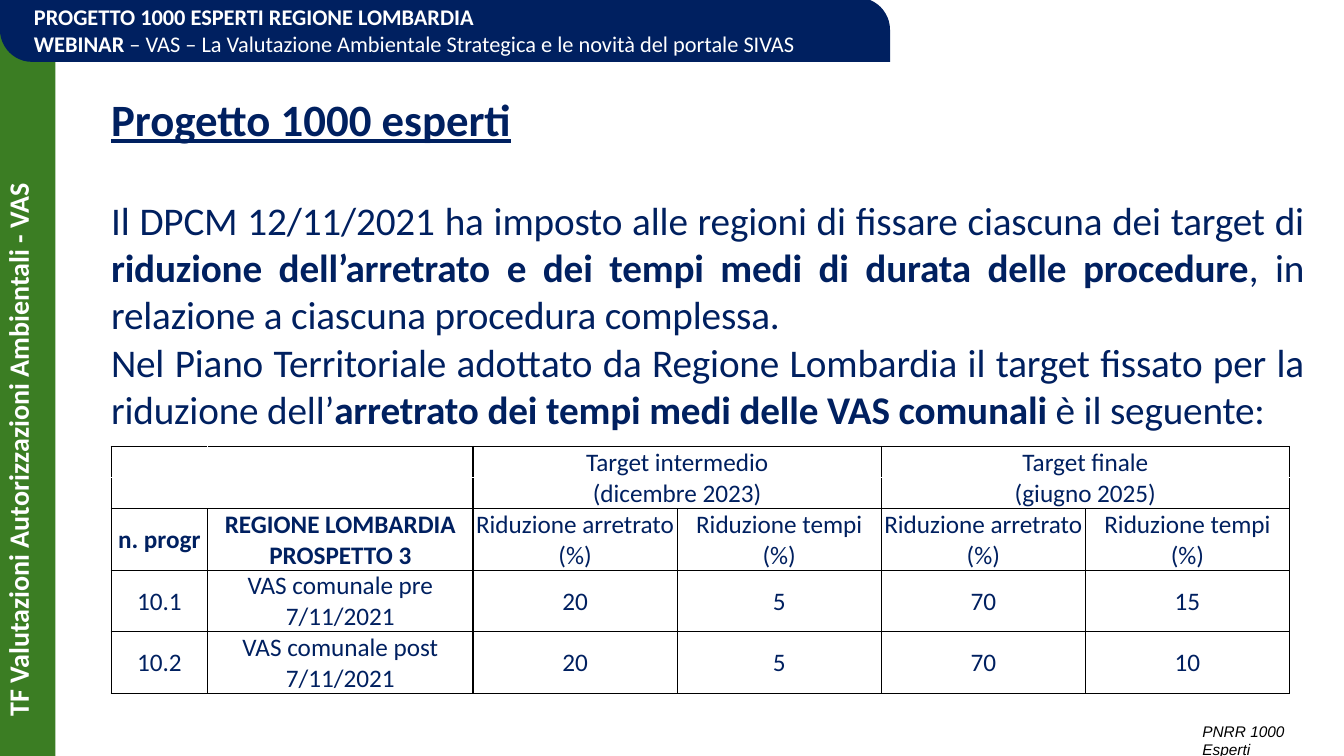
from dataclasses import dataclass

from lxml.etree import SubElement
from pptx import Presentation
from pptx.dml.color import RGBColor
from pptx.enum.shapes import MSO_SHAPE
from pptx.enum.text import MSO_ANCHOR, PP_ALIGN
from pptx.oxml.ns import qn
from pptx.util import Cm, Pt


@dataclass(frozen=True)
class Theme:
    """Colours, fonts and type sizes of the slide."""
    navy: str = "002060"
    green: str = "3B7D23"
    white: str = "FFFFFF"
    black: str = "000000"
    face: str = "Calibri"
    plain: str = "Arial"
    title: int = 32
    body: int = 28
    side: int = 20
    cell: int = 18
    head: int = 16
    foot: int = 11


THEME = Theme()
PAD = ("margin_left", "margin_top", "margin_right", "margin_bottom")

LINES = [
    [("PROGETTO 1000 ESPERTI REGIONE LOMBARDIA", True)],
    [("WEBINAR ", True),
     ("– VAS – La Valutazione Ambientale Strategica e le novità del portale SIVAS", False)],
]
TITLE = "Progetto 1000 esperti"
BODY = [
    [("Il DPCM 12/11/2021 ha imposto alle regioni di fissare ciascuna dei target di ", False),
     ("riduzione dell’arretrato e dei tempi medi di durata delle procedure", True),
     (", in relazione a ciascuna procedura complessa.", False)],
    [("Nel Piano Territoriale adottato da Regione Lombardia il target fissato per la "
      "riduzione dell’", False),
     ("arretrato dei tempi medi delle VAS comunali ", True),
     ("è il seguente:", False)],
]
CUTS = ["Riduzione arretrato (%)", "Riduzione tempi (%)"]
ROWS = [
    ["", "", "Target intermedio", "", "Target finale", ""],
    ["", "", "(dicembre 2023)", "", "(giugno 2025)", ""],
    ["n. progr", "REGIONE LOMBARDIA PROSPETTO 3", *CUTS, *CUTS],
    ["10.1", "VAS comunale pre 7/11/2021", "20", "5", "70", "15"],
    ["10.2", "VAS comunale post 7/11/2021", "20", "5", "70", "10"],
]
WIDE = [2.44, 6.71, 5.16, 5.16, 5.16, 5.16]
TALL = [0.78, 0.78, 1.55, 1.55, 1.55]


def put(item, vals):
    """Set each named attribute of an item."""
    for name, val in vals.items():
        setattr(item, name, val)


def style(font, tint, size, **vals):
    """Give a font its colour, size and other values."""
    put(font, {"name": THEME.face, "size": Pt(size), **vals})
    font.color.rgb = RGBColor.from_string(tint)


def write(para, runs, tint, size, **vals):
    """Add runs of (text, bold) to a paragraph."""
    for text, bold in runs:
        run = para.add_run()
        run.text = text
        style(run.font, tint, size, **{"bold": bold, **vals})


def shape(slide, kind, box, tint):
    """Draw a flat shape with no outline."""
    form = slide.shapes.add_shape(kind, *map(Cm, box))
    form.shadow.inherit = False
    form.fill.solid()
    form.fill.fore_color.rgb = RGBColor.from_string(tint)
    form.line.fill.background()
    return form


def label(slide, box, wrap=True):
    """Add a text box and return its frame."""
    frame = slide.shapes.add_textbox(*map(Cm, box)).text_frame
    frame.word_wrap = wrap
    return frame


def side(slide, x, y, w, h):
    """Draw the green side bar with its upright title."""
    shape(slide, MSO_SHAPE.RECTANGLE, (x, y, w, h), THEME.green)
    frame = label(slide, (x - 0.1, y + 3.2, w - 0.03, h - 3.2))
    frame._txBody.bodyPr.set("vert", "vert270")
    para = frame.paragraphs[0]
    para.alignment = PP_ALIGN.CENTER
    write(para, [("TF Valutazioni Autorizzazioni Ambientali - VAS", True)],
          THEME.white, THEME.side)


def header(slide, x, y, w, h):
    """Draw the navy banner with its two lines."""
    form = shape(slide, MSO_SHAPE.ROUND_2_DIAG_RECTANGLE, (x, y, w, h), THEME.navy)
    form.adjustments[0] = 0
    form.adjustments[1] = 0.5
    frame = form.text_frame
    put(frame, {"word_wrap": True, "vertical_anchor": MSO_ANCHOR.MIDDLE,
                "margin_left": Cm(0.62), "margin_top": Cm(0.13),
                "margin_bottom": Cm(0.13)})
    for num, runs in enumerate(LINES):
        para = frame.add_paragraph() if num else frame.paragraphs[0]
        para.alignment = PP_ALIGN.LEFT
        write(para, runs, THEME.white, THEME.head)


def body(slide, x, y, w, h):
    """Write the title and the justified text."""
    frame = label(slide, (x, y, w, h))
    put(frame, dict.fromkeys(PAD, 0))
    para = frame.paragraphs[0]
    put(para, {"alignment": PP_ALIGN.JUSTIFY, "space_after": Pt(35)})
    write(para, [(TITLE, True)], THEME.navy, THEME.title, underline=True)
    for runs in BODY:
        para = frame.add_paragraph()
        put(para, {"alignment": PP_ALIGN.JUSTIFY, "space_before": Pt(0.9)})
        write(para, runs, THEME.navy, THEME.body)
        for run in para.runs:
            run.font._element.set("spc", "-10")


def edge(cell, row, col):
    """Rule the four sides of a cell, white inside the header."""
    pale = {"L": row < 2 and col == 1, "R": row < 2 and col == 0,
            "T": row == 1, "B": row == 0}
    props = cell._tc.get_or_add_tcPr()
    for key, faint in pale.items():
        line = SubElement(props, qn(f"a:ln{key}"), w=str(Pt(1)))
        fill = SubElement(line, qn("a:solidFill"))
        SubElement(fill, qn("a:srgbClr"), val=THEME.white if faint else THEME.black)


def targets(slide, x, y, w, h):
    """Build the table of targets."""
    grid = slide.shapes.add_table(len(ROWS), len(WIDE), *map(Cm, (x, y, w, h))).table
    put(grid, {"first_row": False, "horz_banding": False})
    for col, wide in zip(grid.columns, WIDE):
        col.width = Cm(wide * w / sum(WIDE))
    for num, tall in enumerate(TALL):
        grid.rows[num].height = Cm(tall * h / sum(TALL))
    for row, texts in enumerate(ROWS):
        for col, text in enumerate(texts):
            cell = grid.cell(row, col)
            put(cell, {**dict.fromkeys(PAD, Cm(0.02)), "margin_bottom": 0,
                       "vertical_anchor": MSO_ANCHOR.BOTTOM if row < 2 else MSO_ANCHOR.MIDDLE})
            edge(cell, row, col)
            cell.fill.background()
            para = cell.text_frame.paragraphs[0]
            para.alignment = PP_ALIGN.CENTER
            style(para.font, THEME.navy, THEME.cell)
            if text:
                write(para, [(text, row == 2 and col < 2)], THEME.navy, THEME.cell)
    for row in range(2):
        for col in (2, 4):
            grid.cell(row, col).merge(grid.cell(row, col + 1))


def footer(slide, x, y, w, h):
    """Write the project name at the foot."""
    para = label(slide, (x, y, w, h), False).paragraphs[0]
    write(para, [("PNRR 1000 Esperti", False)], THEME.black, THEME.foot,
          name=THEME.plain, italic=True)


def main():
    """Build and save the slide."""
    deck = Presentation()
    put(deck, {"slide_width": Cm(33.87), "slide_height": Cm(19.05)})
    slide = deck.slides.add_slide(deck.slide_layouts[6])
    side(slide, 0, 0.43, 1.4, 18.62)
    header(slide, 0, -0.06, 22.43, 1.62)
    footer(slide, 30.05, 18.06, 3.82, 0.74)
    body(slide, 2.8, 2.32, 30.07, 8.69)
    targets(slide, 2.8, 11.25, 29.7, 6.22)
    deck.save("out.pptx")


if __name__ == "__main__":
    main()
